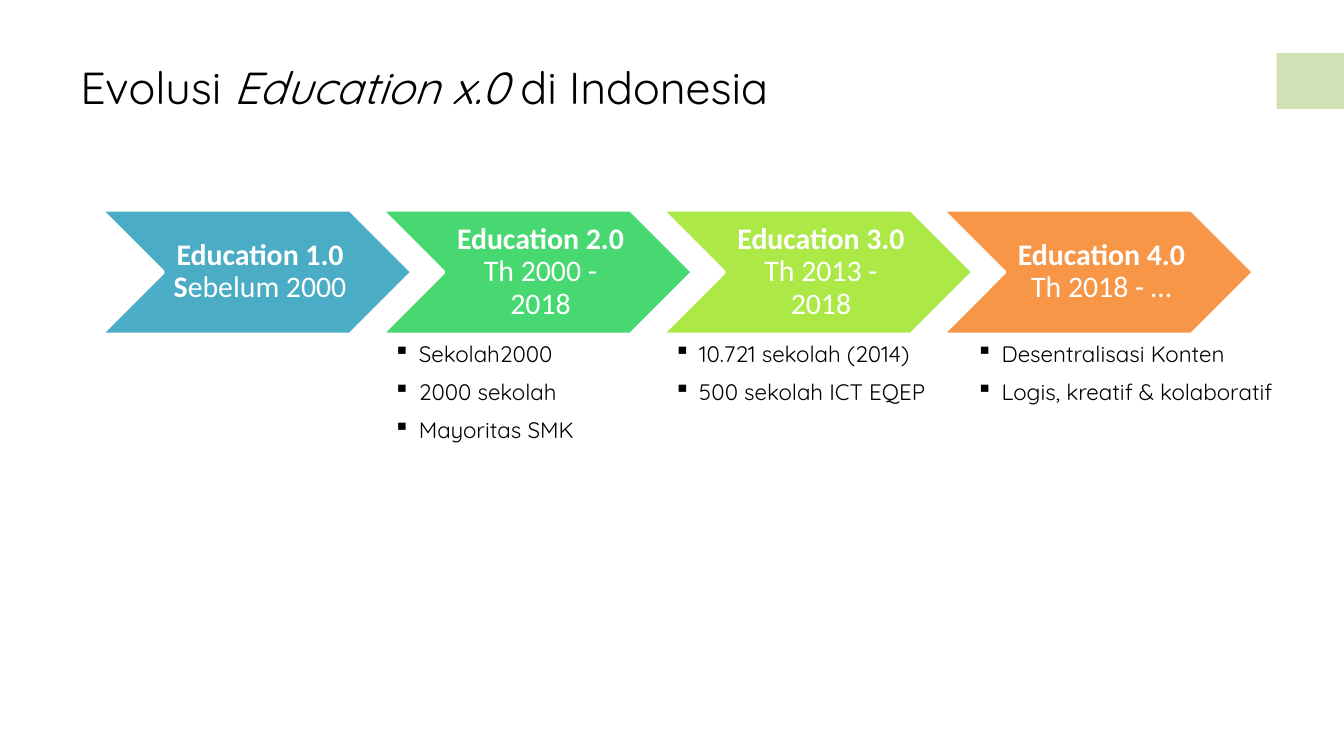
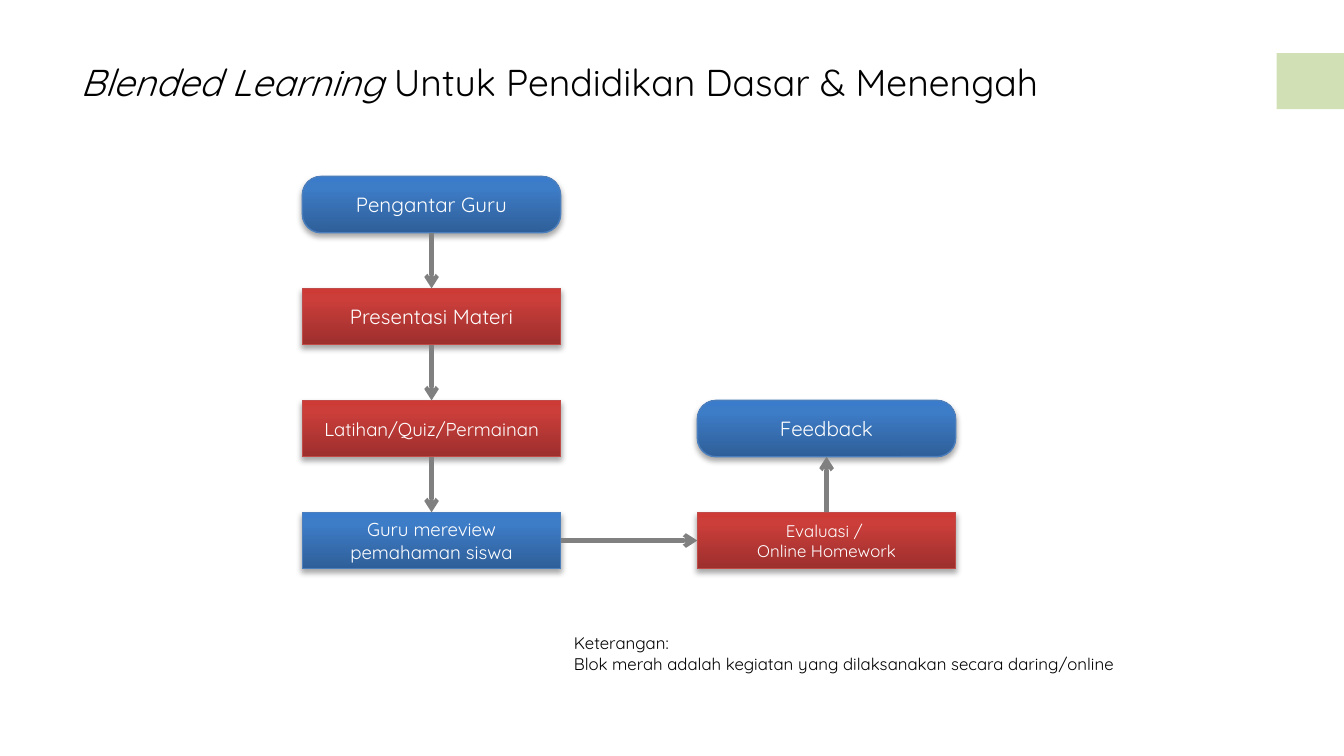
import copy
from typing import NamedTuple, Optional, Union

import pptx
import pptx.dml.color
import pptx.enum.shapes
import pptx.enum.text
import pptx.oxml
import pptx.oxml.ns
import pptx.shapes.autoshape
import pptx.shapes.shapetree
import pptx.slide
import pptx.text.text
import pptx.util

Pt = pptx.util.Pt
RGBColor = pptx.dml.color.RGBColor
Preset = pptx.enum.shapes.MSO_SHAPE
Align = pptx.enum.text.PP_ALIGN
Anchor = pptx.enum.text.MSO_ANCHOR
AutoSize = pptx.enum.text.MSO_AUTO_SIZE
Shape = pptx.shapes.autoshape.Shape
Shapes = Union[pptx.shapes.shapetree.SlideShapes, pptx.shapes.shapetree.GroupShapes]

# Shared look
FONT = "Quicksand"
CHEVRON_FONT = "Calibri"
BLACK = RGBColor(0x00, 0x00, 0x00)
WHITE = RGBColor(0xFF, 0xFF, 0xFF)
TAB_GREEN = RGBColor(0xD2, 0xE1, 0xB5)
ARROW_GREY = RGBColor(0x80, 0x80, 0x80)
TEAL = RGBColor(0x4B, 0xAC, 0xC6)
GREEN = RGBColor(0x47, 0xD8, 0x72)
LIME = RGBColor(0xAC, 0xE9, 0x46)
ORANGE = RGBColor(0xF7, 0x96, 0x46)

# Connection sites
TOP, LEFT, BOTTOM, RIGHT = range(4)

# Chevron row
CHEVRON_LEFT, CHEVRON_TOP, CHEVRON_STEP = 54, 112.4, 150.24
CHEVRON_WIDTH, CHEVRON_HEIGHT = 167, 66.8
LABEL_OFFSET, LABEL_WIDTH = 33.5, 100.2
BULLETS_TOP, BULLET_INDENT = 178.6, 13.5

# Flowchart grid
FLOW_LEFTS = (162, 373.6)
FLOW_TOP, FLOW_STEP = 94.5, 60
FLOW_WIDTH, FLOW_HEIGHT = 138.4, 30.2


class Box(NamedTuple):
    left: float
    top: float
    width: float
    height: float

    def lengths(self) -> list[pptx.util.Length]:
        return [Pt(value) for value in self]


class Run(NamedTuple):
    text: str
    bold: bool = False
    italic: bool = False


class Era(NamedTuple):
    runs: list[Run]
    color: RGBColor


class BulletList(NamedTuple):
    box: Box
    items: list[str]


class Palette(NamedTuple):
    stops: list[tuple[float, RGBColor]]
    line: RGBColor


class Step(NamedTuple):
    text: str
    column: int
    row: int
    palette: Palette
    size: float
    rounded: bool = False


class Arrow(NamedTuple):
    start: int
    start_site: int
    end: int
    end_site: int


BLUE_BLOCK = Palette(
    [(0, RGBColor(0x2F, 0x5F, 0x99)), (0.8, RGBColor(0x3D, 0x7C, 0xC7)),
     (1, RGBColor(0x3A, 0x7C, 0xCB))], RGBColor(0x4B, 0x7E, 0xBC))
RED_BLOCK = Palette(
    [(0, RGBColor(0x9C, 0x2F, 0x2D)), (0.8, RGBColor(0xCB, 0x3E, 0x3A)),
     (1, RGBColor(0xCE, 0x3B, 0x37))], RGBColor(0xBF, 0x4C, 0x48))

ERAS = [
    Era([Run("Education 1.0\nS", bold=True), Run("ebelum 2000")], TEAL),
    Era([Run("Education 2.0\n", bold=True), Run("Th 2000 - 2018")], GREEN),
    Era([Run("Education 3.0\n", bold=True), Run("Th 2013 - 2018")], LIME),
    Era([Run("Education 4.0\n", bold=True), Run("Th 2018 - …")], ORANGE),
]
BULLET_LISTS = [
    BulletList(Box(203.8, BULLETS_TOP, 149.8, 63.4),
               ["Sekolah2000", "2000 sekolah", "Mayoritas SMK"]),
    BulletList(Box(354, BULLETS_TOP, 162, 42.5),
               ["10.721 sekolah (2014)", "500 sekolah ICT EQEP"]),
    BulletList(Box(516, BULLETS_TOP, 186, 42.5),
               ["Desentralisasi Konten", "Logis, kreatif & kolaboratif"]),
]
STEPS = [
    Step("Pengantar Guru", 0, 0, BLUE_BLOCK, 11, rounded=True),
    Step("Presentasi Materi", 0, 1, RED_BLOCK, 11),
    Step("Latihan/Quiz/Permainan", 0, 2, RED_BLOCK, 10),
    Step("Guru mereview pemahaman siswa", 0, 3, BLUE_BLOCK, 10),
    Step("Evaluasi / \nOnline Homework", 1, 3, RED_BLOCK, 9),
    Step("Feedback", 1, 2, BLUE_BLOCK, 11, rounded=True),
]
ARROWS = [
    Arrow(0, BOTTOM, 1, TOP),
    Arrow(1, BOTTOM, 2, TOP),
    Arrow(2, BOTTOM, 3, TOP),
    Arrow(3, RIGHT, 4, LEFT),
    Arrow(4, TOP, 5, BOTTOM),
]


def element(tag: str, **attributes: str):
    """Make one DrawingML element."""
    node = pptx.oxml.parse_xml(f"<a:{tag} {pptx.oxml.ns.nsdecls('a')}/>")
    for name, value in attributes.items():
        node.set(name, value)
    return node


def write_text(frame: pptx.text.text.TextFrame, paragraphs: list[list[Run]], *,
               size: float, color: RGBColor = BLACK, font: str = FONT,
               align: Align = Align.LEFT, anchor: Anchor = Anchor.TOP,
               line_spacing: Optional[float] = None, space_after: float = 0,
               indent: float = 0, bullet: Optional[str] = None,
               insets: tuple[float, float, float, float] = (7.2, 3.6, 7.2, 3.6),
               grow: bool = False) -> None:
    """Fill a text frame; a newline inside a run is a line break."""
    frame.word_wrap = True
    frame.auto_size = AutoSize.SHAPE_TO_FIT_TEXT if grow else AutoSize.NONE
    frame.vertical_anchor = anchor
    (frame.margin_left, frame.margin_top,
     frame.margin_right, frame.margin_bottom) = map(Pt, insets)
    for index, runs in enumerate(paragraphs):
        paragraph = frame.add_paragraph() if index else frame.paragraphs[0]
        paragraph.alignment = align
        paragraph.line_spacing = line_spacing
        paragraph.space_after = Pt(space_after)
        if bullet:
            properties = paragraph._p.get_or_add_pPr()
            properties.set("marL", str(Pt(indent)))
            properties.set("indent", str(-Pt(indent)))
            properties.append(element("buChar", char=bullet))
        for part in runs:
            for number, line in enumerate(part.text.split("\n")):
                if number:
                    paragraph.add_line_break()
                if not line:
                    continue
                run = paragraph.add_run()
                run.text = line
                run.font.name = font
                run.font.size = Pt(size)
                run.font.bold = part.bold
                run.font.italic = part.italic
                run.font.color.rgb = color


def add_text(shapes: Shapes, box: Box, paragraphs: list[list[Run]], **style) -> None:
    write_text(shapes.add_textbox(*box.lengths()).text_frame, paragraphs, **style)


def add_block(shapes: Shapes, preset: Preset, box: Box,
              fill: Optional[RGBColor] = None, line: Optional[RGBColor] = None,
              line_width: float = 0) -> Shape:
    shape = shapes.add_shape(preset, *box.lengths())
    shape.shadow.inherit = False
    if fill is not None:
        shape.fill.solid()
        shape.fill.fore_color.rgb = fill
    if line is None:
        shape.line.fill.background()
    else:
        shape.line.color.rgb = line
        shape.line.width = Pt(line_width)
    return shape


def apply_gradient(shape: Shape, stops: list[tuple[float, RGBColor]]) -> None:
    """Gradient running from the bottom edge to the top edge."""
    shape.fill.gradient()
    shape.fill.gradient_angle = 90
    stop_list = shape._element.spPr.find(".//" + pptx.oxml.ns.qn("a:gsLst"))
    stop_list.append(copy.deepcopy(stop_list[0]))
    for stop, (position, color) in zip(shape.fill.gradient_stops, stops):
        stop.position = position
        stop.color.rgb = color


def apply_shadow(shape: Shape) -> None:
    shadow = element("outerShdw", blurRad=str(Pt(3.1)), dist=str(Pt(1.8)),
                     dir="5400000", rotWithShape="0")
    color = element("srgbClr", val=str(BLACK))
    color.append(element("alpha", val="35000"))
    shadow.append(color)
    shape._element.spPr.find(pptx.oxml.ns.qn("a:effectLst")).append(shadow)


def add_step(shapes: Shapes, step: Step) -> Shape:
    box = Box(FLOW_LEFTS[step.column], FLOW_TOP + step.row * FLOW_STEP,
              FLOW_WIDTH, FLOW_HEIGHT)
    preset = Preset.ROUNDED_RECTANGLE if step.rounded else Preset.RECTANGLE
    shape = add_block(shapes, preset, box, line=step.palette.line, line_width=0.75)
    if step.rounded:
        shape.adjustments[0] = 0.33
    apply_gradient(shape, step.palette.stops)
    apply_shadow(shape)
    write_text(shape.text_frame, [[Run(step.text)]], size=step.size, color=WHITE,
               align=Align.CENTER, anchor=Anchor.MIDDLE)
    return shape


def add_arrow(shapes: Shapes, arrow: Arrow, blocks: list[Shape]) -> None:
    connector = shapes.add_connector(
        pptx.enum.shapes.MSO_CONNECTOR.STRAIGHT, 0, 0, 0, 0)
    connector.begin_connect(blocks[arrow.start], arrow.start_site)
    connector.end_connect(blocks[arrow.end], arrow.end_site)
    connector.line.color.rgb = ARROW_GREY
    connector.line.width = Pt(2.25)
    connector.line._get_or_add_ln().append(element("tailEnd", type="arrow"))
    connector._element.spPr.append(element("effectLst"))


def add_titled_slide(presentation, title: list[Run], size: float,
                     height: float) -> pptx.slide.Slide:
    """Blank slide with the green edge tab and the title."""
    slide = presentation.slides.add_slide(presentation.slide_layouts[6])
    add_block(slide.shapes, Preset.RECTANGLE, Box(684, 28.5, 36, 30), TAB_GREEN)
    add_text(slide.shapes, Box(36, 28.2, 558, height), [title], size=size, grow=True)
    return slide


def build_evolution(presentation) -> None:
    title = [Run("Evolusi "), Run("Education x.0 ", italic=True), Run("di Indonesia")]
    slide = add_titled_slide(presentation, title, 24, 36)

    # Row of chevrons
    group = slide.shapes.add_group_shape()
    for index, era in enumerate(ERAS):
        box = Box(CHEVRON_LEFT + index * CHEVRON_STEP, CHEVRON_TOP,
                  CHEVRON_WIDTH, CHEVRON_HEIGHT)
        add_block(group.shapes, Preset.CHEVRON, box, era.color, WHITE, 2)
        label = box._replace(left=box.left + LABEL_OFFSET, width=LABEL_WIDTH)
        add_text(group.shapes, label, [era.runs], size=16, color=WHITE,
                 font=CHEVRON_FONT, align=Align.CENTER, anchor=Anchor.MIDDLE,
                 line_spacing=0.9, insets=(5, 1.5, 1.5, 1.5))

    # Notes under the chevrons
    for bullets in BULLET_LISTS:
        add_text(slide.shapes, bullets.box, [[Run(item)] for item in bullets.items],
                 size=12, space_after=6, indent=BULLET_INDENT, bullet="▪", grow=True)


def build_blended_learning(presentation) -> None:
    title = [Run("Blended Learning ", italic=True),
             Run("Untuk Pendidikan Dasar & Menengah")]
    slide = add_titled_slide(presentation, title, 20, 31.5)

    # Flowchart
    blocks = [add_step(slide.shapes, step) for step in STEPS]
    for arrow in ARROWS:
        add_arrow(slide.shapes, arrow, blocks)

    # Legend
    legend = ("Keterangan: \n"
              "Blok merah adalah kegiatan yang dilaksanakan secara daring/online")
    add_text(slide.shapes, Box(300.4, 335.6, 336, 29), [[Run(legend)]],
             size=9, grow=True)


def main() -> None:
    presentation = pptx.Presentation()
    presentation.slide_width, presentation.slide_height = Pt(720), Pt(405)
    build_evolution(presentation)
    build_blended_learning(presentation)
    presentation.save("out.pptx")


if __name__ == "__main__":
    main()
